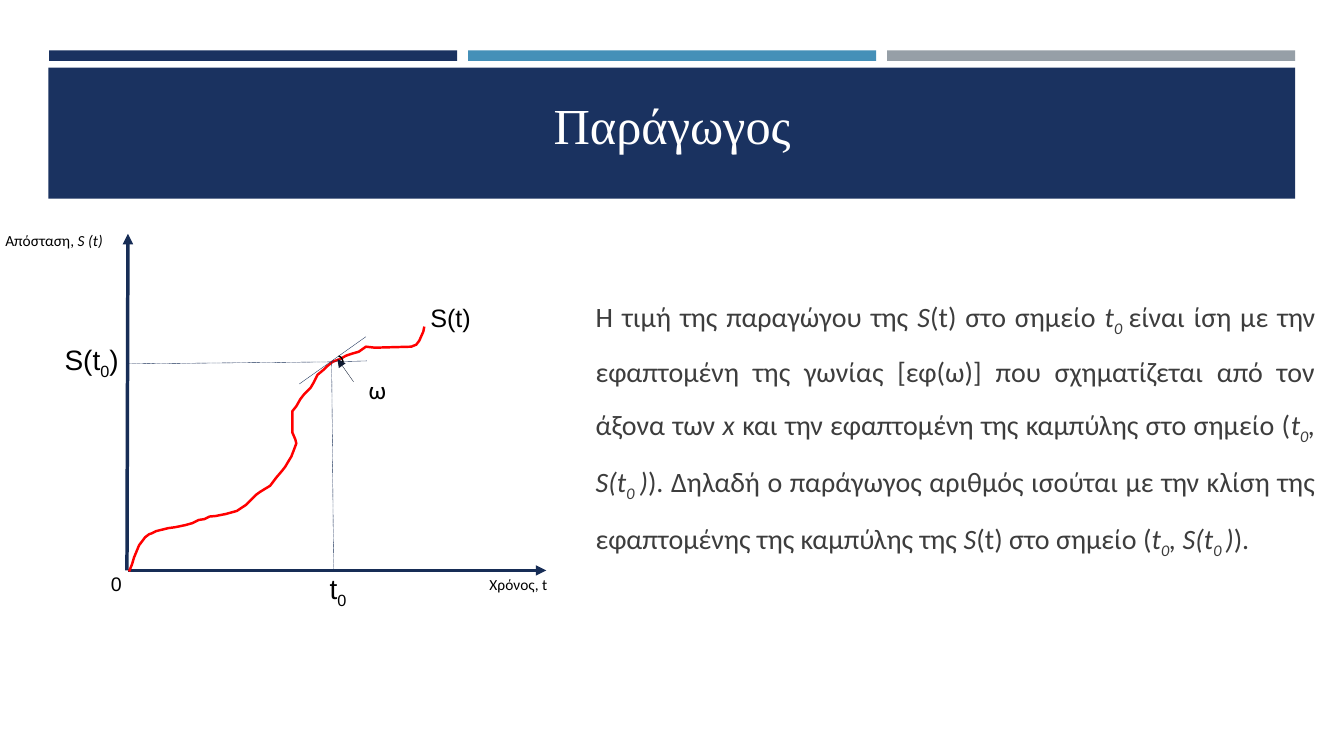
"""Build a slide that explains the derivative as the slope of a tangent."""
from dataclasses import dataclass

from pptx import Presentation
from pptx.dml.color import RGBColor
from pptx.enum.dml import MSO_LINE
from pptx.enum.shapes import MSO_CONNECTOR, MSO_SHAPE as Preset
from pptx.enum.text import MSO_ANCHOR as Anchor, MSO_AUTO_SIZE as AutoSize, PP_ALIGN as Align
from pptx.oxml.ns import qn
from pptx.util import Pt


@dataclass(frozen=True)
class Theme:
    """Colours, fonts and type sizes of the slide."""
    navy: str = "1A3260"
    blue: str = "4590B8"
    grey: str = "969FA7"
    axis: str = "172D56"
    pointer: str = "0D1930"
    curve: str = "FF0000"
    body: str = "3D3D3D"
    black: str = "000000"
    white: str = "FFFFFF"
    serif: str = "Times New Roman"
    sans: str = "Calibri"
    graph: str = "Arial"
    title_size: int = 36
    text_size: int = 20
    curve_size: int = 18
    origin_size: int = 14
    axis_size: int = 11


THEME = Theme()
PLAIN, ITALIC, SUB, ITALIC_SUB = "", "i", "s", "is"

POINT = [("t", ITALIC), ("0", ITALIC_SUB), (", S(t", ITALIC), ("0 ", ITALIC_SUB), (")", ITALIC)]
EXPLANATION = [
    ("Η τιμή της παραγώγου της ", PLAIN), ("S", ITALIC), ("(t) στο σημείο ", PLAIN),
    ("t", ITALIC), ("0 ", ITALIC_SUB),
    ("είναι ίση µε την εφαπτομένη της γωνίας [εφ(ω)] που σχηματίζεται από τον άξονα των ", PLAIN),
    ("x ", ITALIC), ("και την εφαπτομένη της καμπύλης στο σημείο (", PLAIN), *POINT,
    ("). Δηλαδή ο παράγωγος αριθμός ισούται µε την κλίση της εφαπτομένης της καμπύλης της ", PLAIN),
    ("S", ITALIC), ("(t) στο σημείο (", PLAIN), *POINT, (").", PLAIN),
]
CURVE = [
    (92.2, 408.2), (94.3, 403.2), (95.8, 398.2), (99.4, 389.5), (103.7, 383.8), (106.6, 381.6),
    (108.7, 380.9), (111.6, 379.4), (120.2, 377.3), (125.3, 376.6), (132.5, 375.1), (137.5, 373.7),
    (141.8, 371.5), (146.2, 370.8), (149.8, 369), (154.1, 368.6), (161.3, 367.2), (169.2, 365),
    (175.7, 360.7), (179.3, 357.1), (182.9, 353.5), (185.8, 351.4), (189.4, 349.2), (193, 347),
    (195.1, 344.2), (197.3, 341.3), (201.6, 336.2), (203.8, 333.4), (205.9, 329.8), (208.1, 326.2),
    (209.5, 322.6), (211.7, 316.8), (211, 313.9), (208.8, 308.9), (208.8, 306), (208.8, 293.8),
    (211.7, 290.2), (214.6, 285.1), (217.4, 281.5), (221.8, 277.2), (223.9, 273.6), (226.8, 267.8),
    (231.1, 264.2), (234, 261.4), (237.6, 258.5), (243.4, 256.3), (247, 254.2), (251.3, 252.7),
    (256.3, 251.3), (261.4, 247.7), (267.8, 248.4), (293.8, 247.7), (297.4, 246.2), (299.5, 243.4),
    (302.4, 236.9), (303.1, 233.3),
]


def colour(code):
    """Turn a hex code into a colour."""
    return RGBColor.from_string(code)


def place(shape, left, top, width, height):
    """Move and size a shape."""
    shape.left, shape.top, shape.width, shape.height = map(Pt, (left, top, width, height))


def write(para, spans, font, size, ink, align=Align.LEFT):
    """Add styled runs to a paragraph."""
    para.alignment = align
    for text, style in spans:
        span = para.add_run()
        span.text = text
        span.font.name, span.font.size = font, Pt(size)
        span.font.color.rgb = colour(ink)
        span.font.italic = "i" in style
        if "s" in style:
            span.font._element.set("baseline", "-25000")


def stroke(line, ink, width, dashed=False, arrow=False):
    """Style a line, with an optional arrowhead at its end."""
    line.color.rgb = colour(ink)
    line.width = Pt(width)
    if dashed:
        line.dash_style = MSO_LINE.SQUARE_DOT
    if arrow:
        outline = line._get_or_add_ln()
        outline.append(outline.makeelement(qn("a:tailEnd"), {"type": "triangle"}))


def add_preset(page, preset, box, fill=None):
    """Add a preset shape without shadow or outline."""
    shape = page.shapes.add_shape(preset, *map(Pt, box))
    shape.shadow.inherit = False
    shape.line.fill.background()
    if fill:
        shape.fill.solid()
        shape.fill.fore_color.rgb = colour(fill)
    else:
        shape.fill.background()
    return shape


def add_line(page, start, end, width=0.25, **style):
    """Add a straight line of the graph."""
    line = page.shapes.add_connector(MSO_CONNECTOR.STRAIGHT, *map(Pt, start + end))
    stroke(line.line, THEME.axis, width, **style)
    properties = line._element.spPr
    properties.append(properties.makeelement(qn("a:effectLst"), {}))


def add_label(page, spans, box, size, font=THEME.graph, align=Align.LEFT):
    """Add a text label of the graph."""
    frame = page.shapes.add_textbox(*map(Pt, box)).text_frame
    frame.word_wrap = True
    frame.margin_left = frame.margin_right = frame.margin_top = frame.margin_bottom = 0
    write(frame.paragraphs[0], spans, font, size, THEME.black, align)


def add_banner(page):
    """Add the three bars and the title band."""
    for index, fill in enumerate((THEME.navy, THEME.blue, THEME.grey)):
        add_preset(page, Preset.RECTANGLE, (35 + 299.3 * index, 36, 291.6, 7.5), fill)
    add_preset(page, Preset.RECTANGLE, (34.6, 48.4, 890.6, 93.6), THEME.navy)


def fill_placeholders(page):
    """Write the title and the explanation."""
    title, body = page.placeholders
    place(title, 46, 55.4, 868.3, 59)
    place(body, 418.3, 196.6, 528.5, 296)
    for holder, anchor in ((title, Anchor.BOTTOM), (body, Anchor.TOP)):
        holder.text_frame.auto_size = AutoSize.NONE
        holder.text_frame.word_wrap = True
        holder.text_frame.vertical_anchor = anchor
    write(title.text_frame.paragraphs[0], [("Παράγωγος", PLAIN)], THEME.serif,
          THEME.title_size, THEME.white, Align.CENTER)
    para = body.text_frame.paragraphs[0]
    write(para, EXPLANATION, THEME.sans, THEME.text_size, THEME.body, Align.JUSTIFY)
    para.line_spacing, para.space_before, para.space_after = 1.5, Pt(4), Pt(6)
    settings = para._p.get_or_add_pPr()
    settings.set("marL", "0")
    settings.set("indent", "0")
    settings.append(settings.makeelement(qn("a:buNone"), {}))


def add_curve(page):
    """Draw the distance curve."""
    start, *rest = [(Pt(x), Pt(y)) for x, y in CURVE]
    builder = page.shapes.build_freeform(*start)
    builder.add_line_segments(rest, close=False)
    curve = builder.convert_to_shape()
    curve.shadow.inherit = False
    curve.fill.background()
    stroke(curve.line, THEME.curve, 1.75)


def add_graph(page):
    """Draw the axes, the curve, the tangent and their labels."""
    add_line(page, (90.7, 407.5), (91.4, 167), 2.5, arrow=True)
    add_line(page, (91.4, 407.5), (390.2, 407.5), 2.5, arrow=True)
    add_curve(page)
    touch = (236.9, 258.5)
    add_line(page, touch, (238.3, 407.5), dashed=True)
    add_line(page, touch, (90.7, 259.9), dashed=True)
    add_line(page, touch, (262.1, 257.8))
    add_line(page, (213.8, 274.3), (261.4, 240.5))
    add_label(page, [("0", PLAIN)], (79.2, 408.2, 21.6, 17), THEME.origin_size)
    add_label(page, [("Απόσταση, ", PLAIN), ("S (t)", ITALIC)], (0, 164.9, 73.4, 14),
              THEME.axis_size, THEME.sans, Align.RIGHT)
    add_label(page, [("Χρόνος, t", PLAIN)], (320.4, 411.1, 70.6, 14),
              THEME.axis_size, THEME.sans, Align.RIGHT)
    add_label(page, [("S(t)", PLAIN)], (307.4, 216, 41, 22), THEME.curve_size)
    add_label(page, [("t", PLAIN), ("0", SUB)], (235.4, 408.2, 31, 24), THEME.text_size)
    add_label(page, [("S(t", PLAIN), ("0", SUB), (")", PLAIN)], (46.1, 244.8, 51, 24), THEME.text_size)


def add_angle(page):
    """Mark the angle between the tangent and the horizontal."""
    callout = add_preset(page, Preset.LINE_CALLOUT_1_NO_BORDER, (254.9, 269.3, 29.5, 18), THEME.white)
    arc = add_preset(page, Preset.ARC, (238.3, 254.2, 7.2, 15.8))
    for shape, values in ((callout, (0.19, -0.08, -0.72, -0.47)), (arc, (162, 187.07))):
        for index, value in enumerate(values):
            shape.adjustments[index] = value
    stroke(callout.line, THEME.pointer, 0.25, arrow=True)
    stroke(arc.line, THEME.black, 1)
    callout.text_frame.vertical_anchor = Anchor.MIDDLE
    write(callout.text_frame.paragraphs[0], [("ω", PLAIN)], THEME.sans,
          THEME.curve_size, THEME.black, Align.CENTER)


def main():
    """Build and save the deck."""
    deck = Presentation()
    deck.slide_width, deck.slide_height = Pt(960), Pt(540)
    page = deck.slides.add_slide(deck.slide_layouts[1])
    add_banner(page)
    fill_placeholders(page)
    tree = page.shapes._spTree
    for holder in page.placeholders:
        tree.append(holder._element)
    add_graph(page)
    add_angle(page)
    deck.save("out.pptx")


if __name__ == "__main__":
    main()
